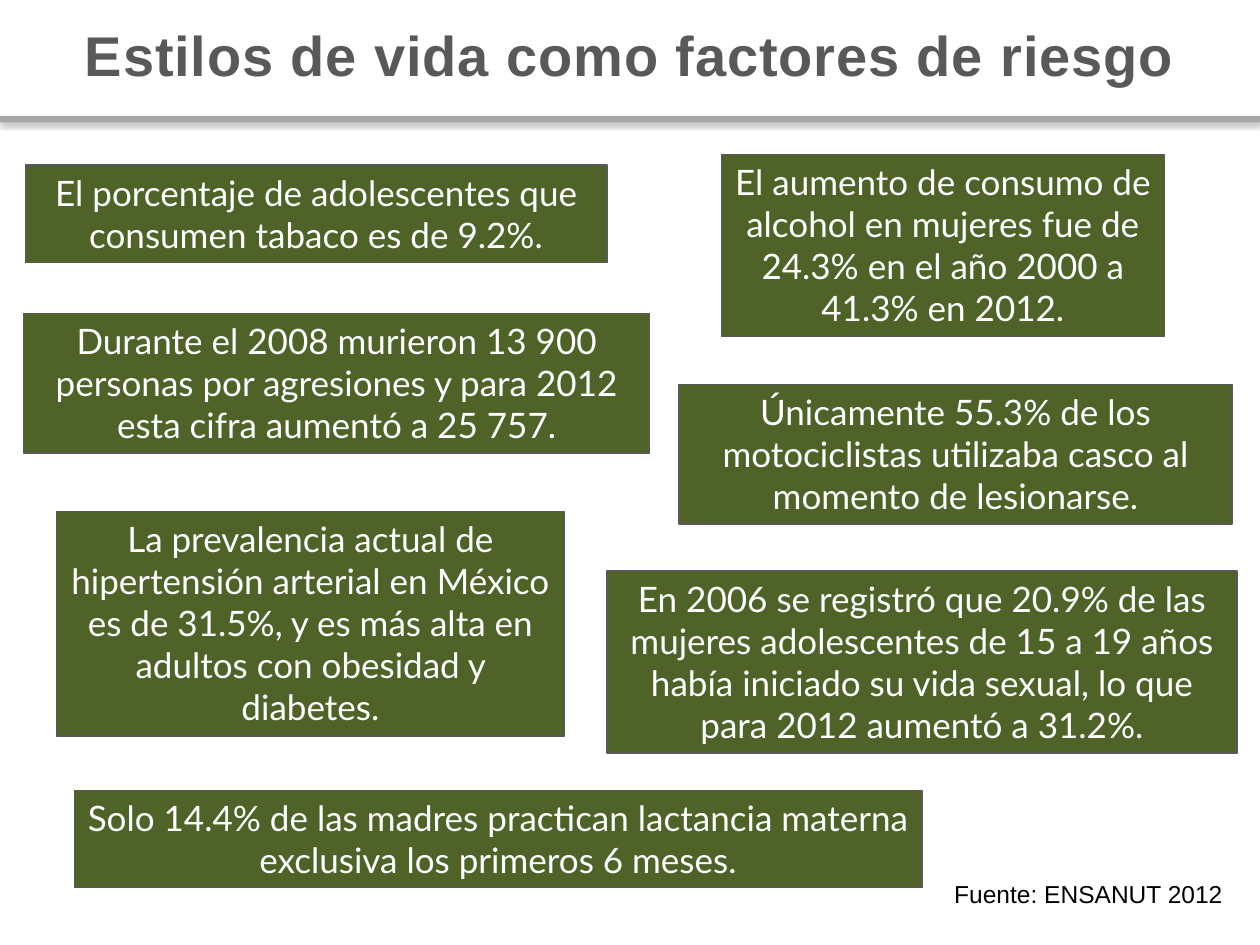
import lxml.etree
import pptx
import pptx.dml.color
import pptx.enum.shapes
import pptx.enum.text
import pptx.oxml
import pptx.oxml.ns
import pptx.util

Cm = pptx.util.Cm
Pt = pptx.util.Pt
RGBColor = pptx.dml.color.RGBColor
Align = pptx.enum.text.PP_ALIGN
Anchor = pptx.enum.text.MSO_ANCHOR

GREEN = RGBColor(0x4F, 0x62, 0x28)
DARK = RGBColor(0x59, 0x59, 0x59)
GRAY = RGBColor(0xA6, 0xA6, 0xA6)
WHITE = RGBColor(0xFF, 0xFF, 0xFF)
BLACK = RGBColor(0, 0, 0)

WIDTH, HEIGHT = 25.4, 19.05
PAD, LINE = 0.25, 0.855

SHADOW = (
    f'<a:effectLst {pptx.oxml.ns.nsdecls("a")}>'
    '<a:outerShdw blurRad="39370" dist="22860" dir="5400000" rotWithShape="0">'
    '<a:srgbClr val="000000"><a:alpha val="35000"/></a:srgbClr>'
    "</a:outerShdw></a:effectLst>"
)

FACTS = [
    (12.24, 11.51, 12.7, 4,
     "En 2006 se registró que 20.9% de las mujeres adolescentes de 15 a 19 años "
     "había iniciado su vida sexual, lo que para 2012 aumentó a 31.2%."),
    (1.14, 10.31, 10.24, 5,
     "La prevalencia actual de hipertensión arterial en México es de 31.5%, "
     "y es más alta en adultos con obesidad y diabetes."),
    (1.5, 15.93, 17.09, 2,
     "Solo 14.4% de las madres practican lactancia materna exclusiva "
     "los primeros 6 meses."),
    (13.69, 7.75, 11.15, 3,
     "Únicamente 55.3% de los motociclistas utilizaba casco "
     "al momento de lesionarse."),
    (0.48, 6.32, 12.62, 3,
     "Durante el 2008 murieron 13 900 personas por agresiones "
     "y para 2012 esta cifra aumentó a 25 757."),
    (14.55, 3.12, 8.92, 4,
     "El aumento de consumo de alcohol en mujeres fue de 24.3% "
     "en el año 2000 a 41.3% en 2012."),
    (0.51, 3.33, 11.73, 2,
     "El porcentaje de adolescentes que consumen tabaco es de 9.2%."),
]


def add_block(slide, box, fill):
    """Add a plain filled rectangle without line or shadow."""
    kind = pptx.enum.shapes.MSO_SHAPE.RECTANGLE
    shape = slide.shapes.add_shape(kind, *map(Cm, box))
    shape.shadow.inherit = False
    shape.fill.solid()
    shape.fill.fore_color.rgb = fill
    shape.line.fill.background()
    return shape


def add_text(shape, text, font, size, color, align, anchor=Anchor.TOP):
    """Write one run of text into a shape and return the run."""
    frame = shape.text_frame
    frame.word_wrap = True
    frame.vertical_anchor = anchor
    para = frame.paragraphs[0]
    para.alignment = align
    run = para.add_run()
    run.text = text
    run.font.name = font
    run.font.size = Pt(size)
    run.font.color.rgb = color
    return run


def add_head(slide, box):
    """Add the title band with the shadowed rule along its bottom."""
    left, top, width, height = box
    thick = 0.13
    rule = add_block(slide, (left, top + height, width, thick), GRAY)
    props = rule.fill._xPr
    props.remove(props.find(pptx.oxml.ns.qn("a:effectLst")))
    props.append(pptx.oxml.parse_xml(SHADOW))
    title = slide.shapes.add_textbox(*map(Cm, box))
    title.text_frame.margin_top = Cm(0.23)
    run = add_text(title, "Estilos de vida como factores de riesgo",
                   "Arial", 32, DARK, Align.CENTER)
    run.font.bold = True
    run._r.get_or_add_rPr().set("spc", "50")


def add_fact(slide, box, text):
    """Add one green fact box."""
    shape = add_block(slide, box, GREEN)
    shape.line.color.rgb = DARK
    shape.line.width = Pt(0.75)
    add_text(shape, text, "Lato", 20, WHITE, Align.CENTER)


def add_source(slide, box):
    """Add the source note."""
    note = slide.shapes.add_textbox(*map(Cm, box))
    add_text(note, "Fuente: ENSANUT 2012", "Arial", 14, BLACK, Align.RIGHT)


def main():
    """Build and save the slide."""
    deck = pptx.Presentation()
    deck.slide_width, deck.slide_height = Cm(WIDTH), Cm(HEIGHT)
    slide = deck.slides.add_slide(deck.slide_layouts[6])
    add_head(slide, (0, 0.18, WIDTH, 2.16))
    add_source(slide, (14.1, 17.6, 10.8, 0.86))
    for left, top, width, lines, text in FACTS:
        add_fact(slide, (left, top, width, PAD + LINE * lines), text)
    deck.save("out.pptx")


if __name__ == "__main__":
    main()
